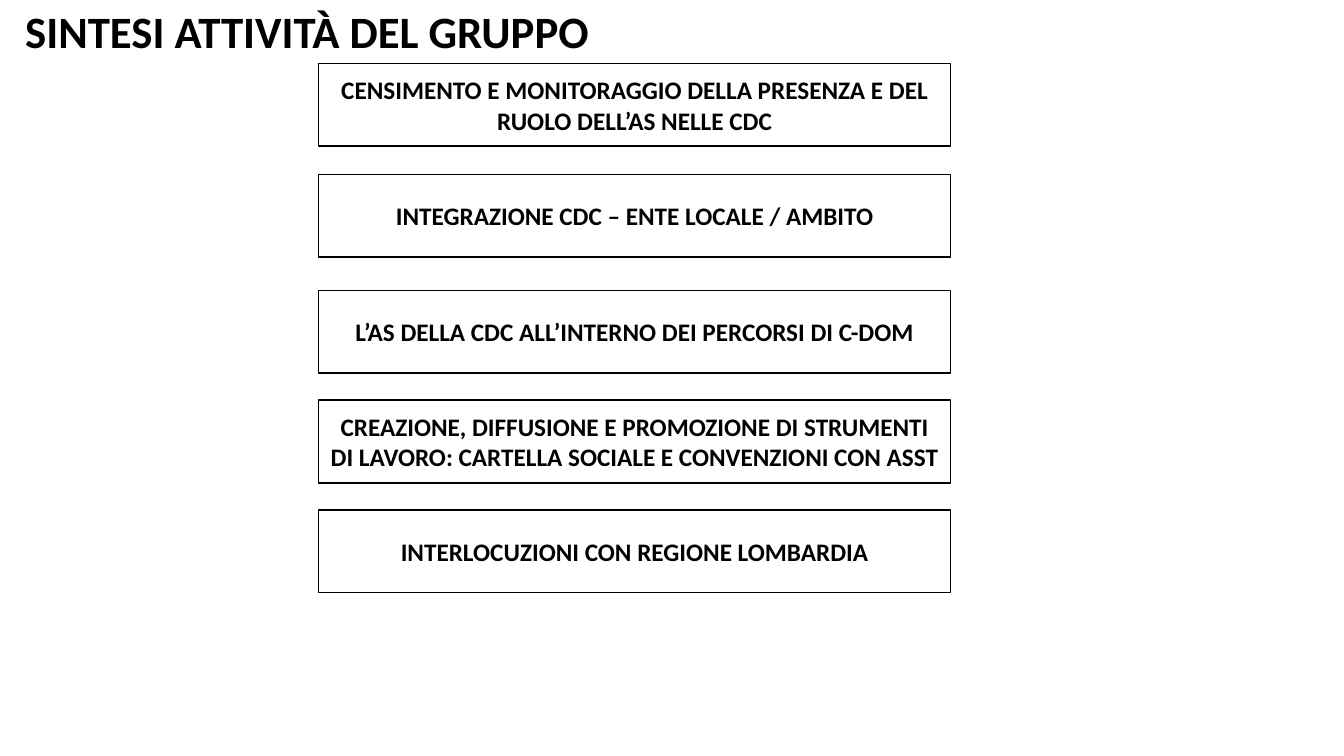
from dataclasses import dataclass

import pptx
import pptx.util
import pptx.dml.color
import pptx.enum.shapes
import pptx.enum.text
from pptx.util import Inches

Align = pptx.enum.text.PP_ALIGN
Anchor = pptx.enum.text.MSO_ANCHOR


@dataclass
class Theme:
    ink = pptx.dml.color.RGBColor(0, 0, 0)
    paper = pptx.dml.color.RGBColor(255, 255, 255)
    font = "Calibri"
    head = pptx.util.Pt(32)
    body = pptx.util.Pt(18)
    rule = pptx.util.Pt(1)


def write(shape, text, size, align, anchor):
    frame = shape.text_frame
    frame.text = text
    frame.word_wrap = True
    frame.auto_size = pptx.enum.text.MSO_AUTO_SIZE.NONE
    frame.vertical_anchor = anchor
    line = frame.paragraphs[0]
    line.alignment = align
    line.line_spacing = 1.0
    font = line.runs[0].font
    font.name = Theme.font
    font.size = size
    font.bold = True
    font.color.rgb = Theme.ink


deck = pptx.Presentation()
deck.slide_width = Inches(13.33)
deck.slide_height = Inches(7.5)
slide = deck.slides.add_slide(deck.slide_layouts[5])

title = slide.shapes.title
title.left, title.top = Inches(0.15), Inches(-0.01)
title.width, title.height = Inches(6.78), Inches(0.64)
write(title, "SINTESI ATTIVITÀ DEL GRUPPO", Theme.head, Align.LEFT, Anchor.TOP)

tasks = [
    (0.63, "CENSIMENTO E MONITORAGGIO DELLA PRESENZA E DEL RUOLO DELL’AS NELLE CDC"),
    (1.73, "INTEGRAZIONE CDC – ENTE LOCALE / AMBITO"),
    (2.88, "L’AS DELLA CDC ALL’INTERNO DEI PERCORSI DI C-DOM"),
    (3.97, "CREAZIONE, DIFFUSIONE E PROMOZIONE DI STRUMENTI DI LAVORO: "
           "CARTELLA SOCIALE E CONVENZIONI CON ASST"),
    (5.06, "INTERLOCUZIONI CON REGIONE LOMBARDIA"),
]
for top, text in tasks:
    box = slide.shapes.add_shape(
        pptx.enum.shapes.MSO_SHAPE.RECTANGLE,
        Inches(3.16), Inches(top), Inches(6.27), Inches(0.82))
    box.shadow.inherit = False
    box.fill.solid()
    box.fill.fore_color.rgb = Theme.paper
    box.line.color.rgb = Theme.ink
    box.line.width = Theme.rule
    write(box, text, Theme.body, Align.CENTER, Anchor.MIDDLE)

deck.save("out.pptx")
